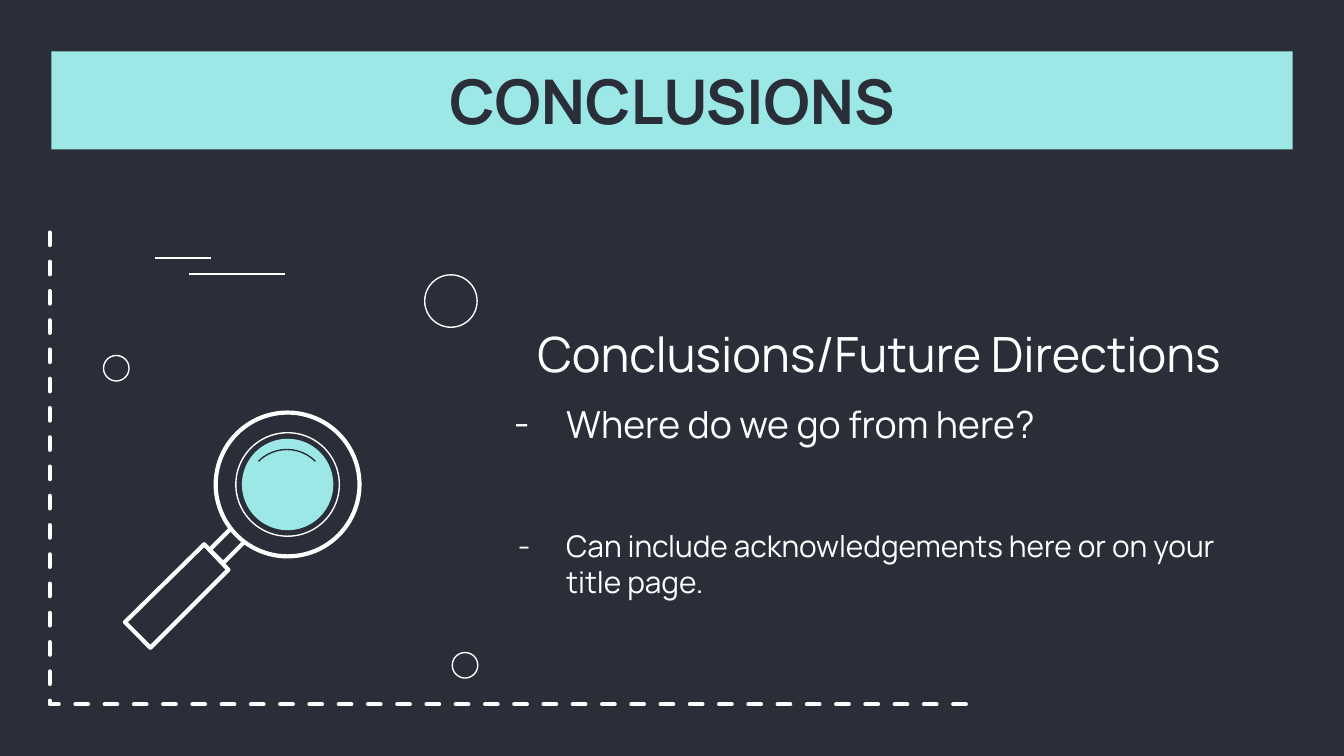
from lxml import etree
from pptx import Presentation
from pptx.dml.color import RGBColor
from pptx.enum.dml import MSO_LINE
from pptx.enum.shapes import MSO_CONNECTOR, MSO_SHAPE
from pptx.enum.text import MSO_ANCHOR, PP_ALIGN
from pptx.oxml.ns import qn
from pptx.util import Inches, Pt

OVAL, ARC, RECT = MSO_SHAPE.OVAL, MSO_SHAPE.ARC, MSO_SHAPE.RECTANGLE
LINE, DASH = MSO_CONNECTOR.STRAIGHT, MSO_LINE.DASH
MID, LEFT, CENTER = MSO_ANCHOR.MIDDLE, PP_ALIGN.LEFT, PP_ALIGN.CENTER

FONT = "Manrope"
HUES = {"dark": "2A2E38", "mint": "9CE8E7", "white": "FFFFFF"}
THIN, THICK = 0.75, 2.25

WIDE = Inches(10)
HIGH = WIDE * 9 // 16
UNIT = WIDE / 100

TITLE = "CONCLUSIONS"
BODY = [
    ("Conclusions/Future Directions", dict(size=26, align=CENTER)),
    ("Where do we go from here?", dict(size=20, gap=10, hang=0.39)),
    ("Can include acknowledgements here or on your title page.",
     dict(size=16, gap=44, hang=0.36)),
]

BAND = (3.82, 3.82, 92.36, 7.3)
PANEL = (36.15, 18.25, 58.6, 32.2)
FRAME = [(3.7, 17.3), (3.7, 52.4), (73.1, 52.4)]
DASHES = [(14.1, 20.4, 21.2), (11.5, 19.2, 15.7)]
DOTS = [(33.55, 22.4, 1.95), (8.65, 27.4, 0.95), (34.6, 49.5, 0.95)]
LENS = (21.4, 36.05)
RINGS = [
    (3.4, dict(fill="mint")),
    (5.35, dict(line="white", width=THICK)),
    (3.85, dict(line="white")),
]
GLINT = (21.35, 36.45, 3)
NECK = [(17.1, 39.4), (15.6, 40.9), (16.6, 41.9), (18.1, 40.4)]
GRIP = [(17, 42.4), (15.2, 40.5), (9.3, 46.3), (11.2, 48.2)]


def emu(nums):
    return [round(n * UNIT) for n in nums]


def hue(name):
    return RGBColor.from_string(HUES[name])


def style(shape, fill=None, line=None, width=THIN):
    shape.shadow.inherit = False
    if fill:
        shape.fill.solid()
        shape.fill.fore_color.rgb = hue(fill)
    else:
        shape.fill.background()
    if line:
        shape.line.color.rgb = hue(line)
        shape.line.width = Pt(width)
    else:
        shape.line.fill.background()
    return shape


def ring(kind, x, y, r, **look):
    box = emu((x - r, y - r, 2 * r, 2 * r))
    return style(shapes.add_shape(kind, *box), **look)


def trace(spots, close=False, width=THICK):
    first, *rest = [emu(spot) for spot in spots]
    pen = shapes.build_freeform(*first)
    pen.add_line_segments(rest, close=close)
    return style(pen.convert_to_shape(), line="white", width=width)


def write(para, text, size, color="white", bold=False, align=LEFT, gap=0, hang=0):
    if hang:
        prop = para._p.get_or_add_pPr()
        prop.set("marL", str(Inches(0.5)))
        prop.set("indent", str(-Inches(hang)))
        tint = etree.SubElement(prop, qn("a:buClr"))
        etree.SubElement(tint, qn("a:srgbClr"), val=HUES[color])
        etree.SubElement(prop, qn("a:buFont"), typeface=FONT)
        etree.SubElement(prop, qn("a:buChar"), char="-")
    para.alignment = align
    if gap:
        para.space_before = Pt(gap)
    run = para.add_run()
    run.text = text
    font = run.font
    font.name, font.size, font.bold = FONT, Pt(size), bold
    font.color.rgb = hue(color)


def pad(shape):
    frame = shape.text_frame
    frame.word_wrap = True
    frame.vertical_anchor = MID
    frame.margin_left = frame.margin_right = Inches(0.1)
    frame.margin_top = frame.margin_bottom = Inches(0.1)
    return frame


deck = Presentation()
deck.slide_width, deck.slide_height = WIDE, HIGH
slide = deck.slides.add_slide(deck.slide_layouts[6])
slide.background.fill.solid()
slide.background.fill.fore_color.rgb = hue("dark")
shapes = slide.shapes

border = trace(FRAME)
border.line.dash_style = DASH
border._element.spPr.find(qn("a:ln")).set("cap", "rnd")

band = style(shapes.add_shape(RECT, *emu(BAND)), fill="mint")
write(pad(band).paragraphs[0], TITLE, size=33, color="dark", bold=True, align=CENTER)

frame = pad(shapes.add_textbox(*emu(PANEL)))
for i, (text, form) in enumerate(BODY):
    para = frame.add_paragraph() if i else frame.paragraphs[0]
    write(para, text, **form)

for x, y, r in DOTS:
    ring(OVAL, x, y, r, line="white")

for x, y, end in DASHES:
    rule = shapes.add_connector(LINE, *emu((x, y, end, y)))
    rule.line.color.rgb = hue("white")
    rule.line.width = Pt(THIN)
    etree.SubElement(rule._element.spPr, qn("a:effectLst"))

for r, look in RINGS:
    ring(OVAL, *LENS, r, **look)
glint = ring(ARC, *GLINT, line="dark")
for i, angle in enumerate((225, 315)):
    glint.adjustments[i] = angle * 0.6

trace(NECK)
trace(GRIP, close=True)

deck.save("out.pptx")
